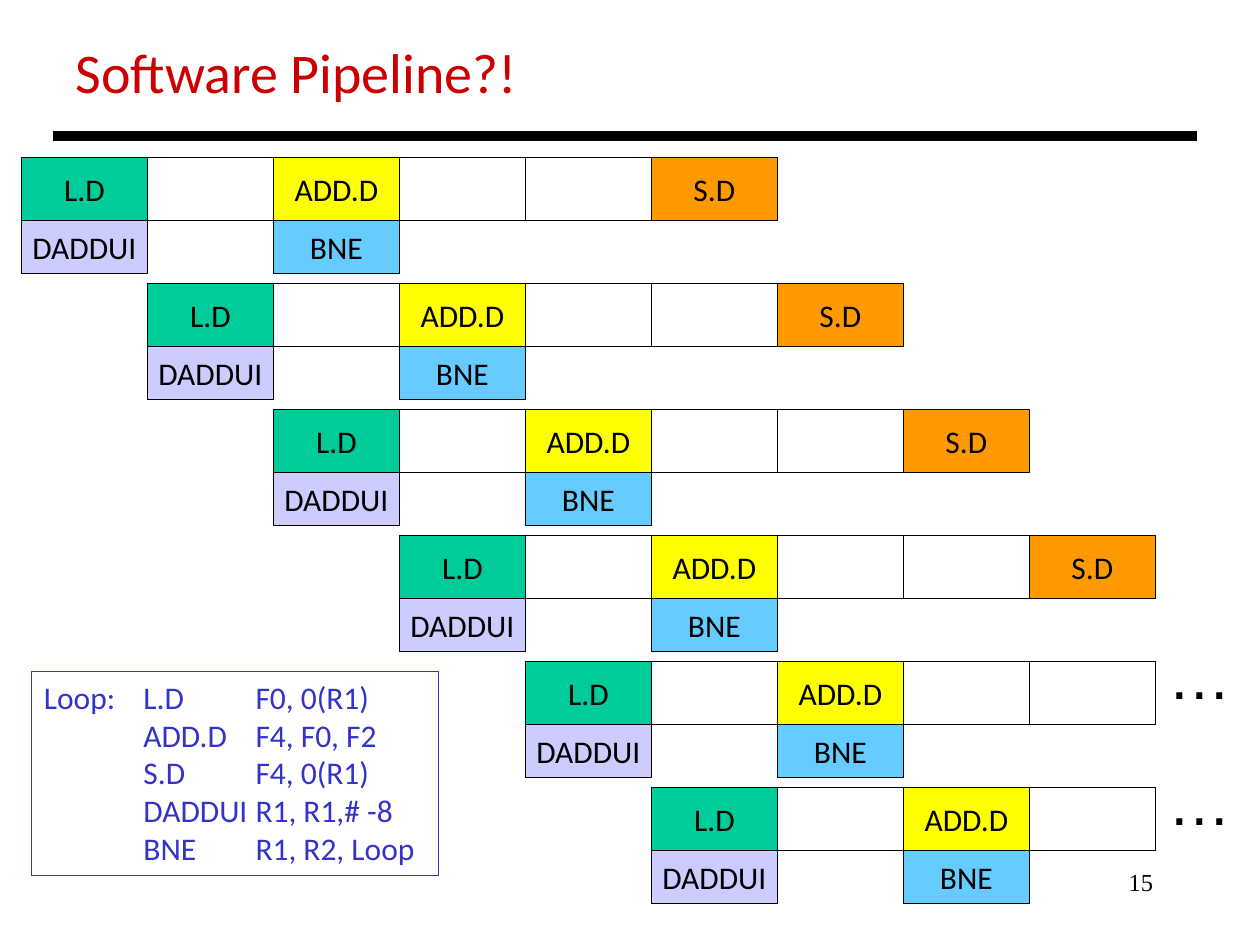
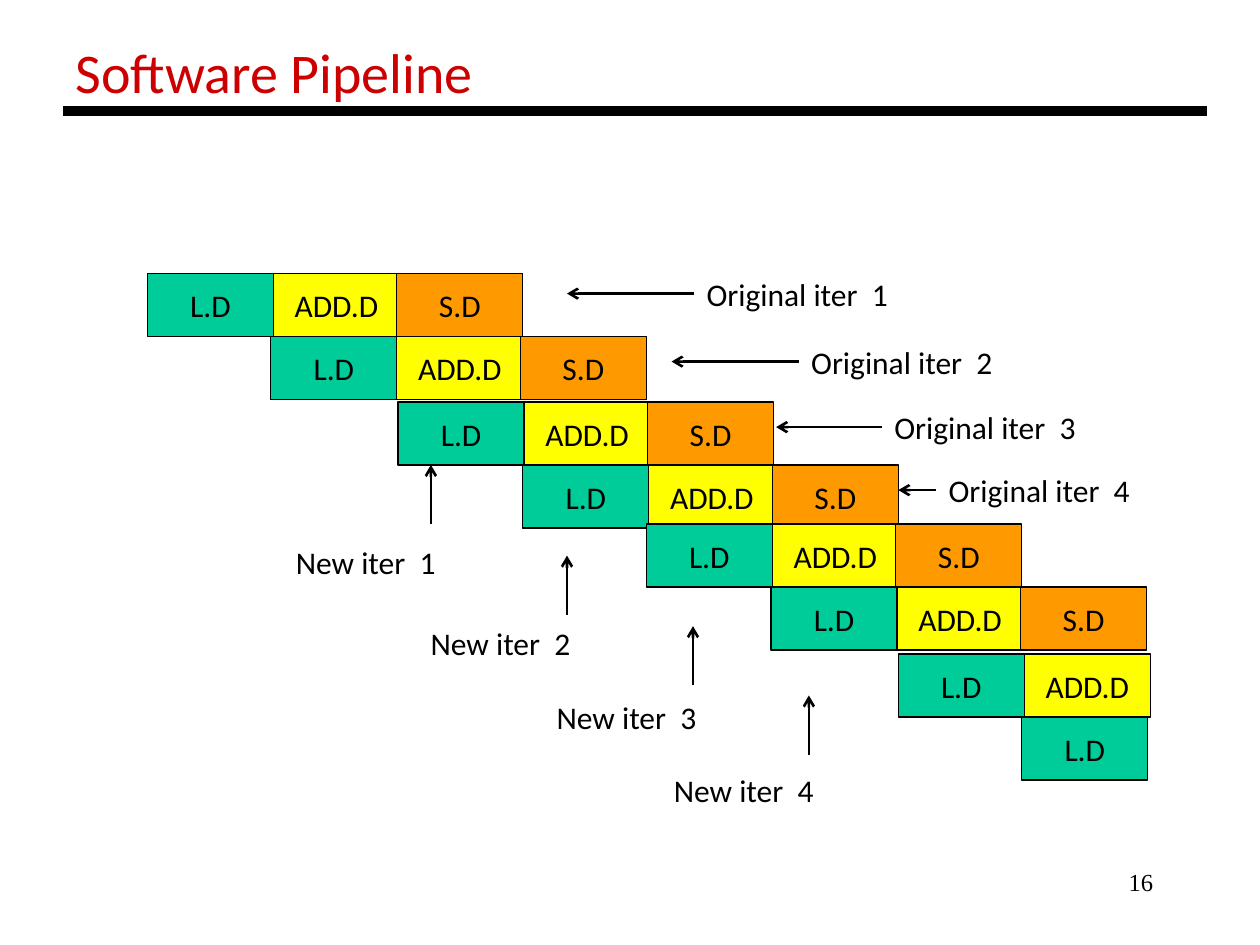
"""Build two slides about software pipelining."""
from dataclasses import dataclass

from pptx import Presentation
from pptx import util as u
from pptx.dml.color import RGBColor
from pptx.enum import shapes, text
from pptx.oxml.ns import qn
from lxml import etree

BLACK, RED, BLUE = "000000", "CC0000", "3333CC"
LEFT, CENTER, RIGHT = text.PP_ALIGN.LEFT, text.PP_ALIGN.CENTER, text.PP_ALIGN.RIGHT
CODE_TABS = (0.79, 1.68)
CODE = """Loop:\tL.D\tF0, 0(R1)
\tADD.D\tF4, F0, F2
\tS.D\tF4, 0(R1)
\tDADDUI\tR1, R1,# -8
\tBNE\tR1, R2, Loop"""


@dataclass(frozen=True)
class Box:
    """Place and size in inches."""
    left: float
    top: float
    width: float
    height: float


@dataclass(frozen=True)
class Style:
    """Look of a paragraph."""
    size: float = 18
    color: str = BLACK
    font: str = "Calibri"
    align: text.PP_ALIGN = LEFT


@dataclass(frozen=True)
class Instruction:
    """Instruction cell; an empty name marks a stall."""
    name: str = ""
    fill: str = ""


@dataclass(frozen=True)
class Iteration:
    """Staircase step with its number of visible instructions."""
    left: float
    top: float
    count: int = 3


@dataclass(frozen=True)
class OriginalLabel:
    """Label whose arrow points left to a step."""
    left: float
    top: float
    arrow_end: float


@dataclass(frozen=True)
class NewLabel:
    """Label whose arrow points up to a column."""
    left: float
    top: float
    arrow_x: float
    arrow_end: float


LOAD = Instruction("L.D", "00CC99")
ADD = Instruction("ADD.D", "FFFF00")
STORE = Instruction("S.D", "FF9900")
STALL = Instruction()
DECREMENT = Instruction("DADDUI", "CCCCFF")
BRANCH = Instruction("BNE", "66CCFF")

SCHEDULE = (LOAD, STALL, ADD, STALL, STALL, STORE)
LOOP_CONTROL = ((0, DECREMENT), (2, BRANCH))
COLUMN_COUNT = 9
STAIRCASE = tuple(zip((LOAD, ADD, STORE), (0, 1, 1.98)))
ITERATIONS = (
    Iteration(1.17, 2.17), Iteration(2.15, 2.67),
    Iteration(3.16, 3.19), Iteration(4.15, 3.69),
    Iteration(5.13, 4.16), Iteration(6.12, 4.66),
    Iteration(7.13, 5.19, 2), Iteration(8.11, 5.69, 1),
)
ORIGINAL_LABELS = (
    OriginalLabel(5.51, 2.13, 4.5), OriginalLabel(6.34, 2.67, 5.33),
    OriginalLabel(7, 3.19, 6.16), OriginalLabel(7.43, 3.69, 7.13),
)
NEW_LABELS = (
    NewLabel(2.25, 4.26, 3.42, 3.69), NewLabel(3.32, 4.9, 4.5, 4.41),
    NewLabel(4.32, 5.49, 5.5, 4.97), NewLabel(5.25, 6.07, 6.42, 5.52),
)


def rgb(color: str) -> RGBColor:
    """Turn a hex string into a colour."""
    return RGBColor.from_string(color)


def inches(box: Box) -> tuple:
    """Give the four lengths of a box."""
    return tuple(u.Inches(value) for value in (box.left, box.top, box.width, box.height))


def write(shape, content: str, style: Style, wrap: bool = False) -> None:
    """Put styled text into a shape."""
    frame = shape.text_frame
    frame.word_wrap = wrap
    frame.text = content
    for paragraph in frame.paragraphs:
        paragraph.alignment = style.align
        paragraph.font.size = u.Pt(style.size)
        paragraph.font.name = style.font
        paragraph.font.color.rgb = rgb(style.color)


def add_text(slide, box: Box, content: str, style: Style = Style(), wrap: bool = False):
    """Add a text box."""
    shape = slide.shapes.add_textbox(*inches(box))
    write(shape, content, style, wrap)
    return shape


def add_rectangle(slide, box: Box, line: str, fill: str = ""):
    """Add an outlined rectangle, filled when a colour is given."""
    shape = slide.shapes.add_shape(shapes.MSO_SHAPE.RECTANGLE, *inches(box))
    shape.shadow.inherit = False
    shape.line.color.rgb = rgb(line)
    shape.line.width = u.Pt(0.75)
    if fill:
        shape.fill.solid()
        shape.fill.fore_color.rgb = rgb(fill)
    else:
        shape.fill.background()
    return shape


def add_cell(slide, instruction: Instruction, left: float, top: float, height: float = 0.5) -> None:
    """Add one instruction cell."""
    shape = add_rectangle(slide, Box(left, top, 1, height), BLACK, instruction.fill)
    if instruction.name:
        write(shape, instruction.name, Style(align=CENTER))
        shape.text_frame.vertical_anchor = text.MSO_ANCHOR.MIDDLE


def add_line(slide, start: tuple[float, float], end: tuple[float, float],
             width: float, arrow: bool = False):
    """Add a straight black line or arrow."""
    points = (u.Inches(value) for value in (*start, *end))
    connector = slide.shapes.add_connector(shapes.MSO_CONNECTOR.STRAIGHT, *points)
    connector.line.color.rgb = rgb(BLACK)
    connector.line.width = u.Pt(width)
    if arrow:
        etree.SubElement(connector.line._get_or_add_ln(), qn("a:tailEnd"), type="arrow")
    etree.SubElement(connector._element.spPr, qn("a:effectLst"))
    return connector


def add_slide(presentation, title: str, title_width: float, number: int,
              rule_left: float, rule_top: float):
    """Add a blank slide with title, rule and number."""
    slide = presentation.slides.add_slide(presentation.slide_layouts[6])
    add_text(slide, Box(7.17, 6.83, 2.08, 0.5), str(number),
             Style(14, font="Times New Roman", align=RIGHT), wrap=True)
    add_text(slide, Box(0.5, 0.25, title_width, 0.64), title, Style(32, RED))
    add_line(slide, (rule_left, rule_top), (rule_left + 9.08, rule_top), 6)
    return slide


def add_code(slide) -> None:
    """Add the framed loop listing with its tab columns."""
    shape = add_rectangle(slide, Box(0.25, 5.33, 3.23, 1.62), BLUE)
    write(shape, CODE, Style(color=BLUE), wrap=True)
    shape.text_frame.vertical_anchor = text.MSO_ANCHOR.TOP
    for paragraph in shape.text_frame.paragraphs:
        tabs = etree.Element(qn("a:tabLst"))
        for position in CODE_TABS:
            etree.SubElement(tabs, qn("a:tab"), pos=str(u.Inches(position)), algn="l")
        paragraph._p.get_or_add_pPr().insert(0, tabs)


def build_schedule(presentation) -> None:
    """Draw six overlapped iterations with their stalls."""
    slide = add_slide(presentation, "Software Pipeline?!", 3.75, 15, 0.42, 1.08)
    for step in range(6):
        left, top = 0.17 + step, 1.25 + step
        for column, instruction in enumerate(SCHEDULE[:COLUMN_COUNT - step]):
            add_cell(slide, instruction, left + column, top)
        for column, instruction in LOOP_CONTROL:
            add_cell(slide, instruction, left + column, top + 0.5, 0.42)
    for top in (5, 6):
        add_text(slide, Box(9.17, top, 0.7, 0.7), "…", Style(36, font="Arial"))
    add_code(slide)


def build_pipeline(presentation) -> None:
    """Draw the staircase and label original and new iterations."""
    slide = add_slide(presentation, "Software Pipeline", 3.4, 16, 0.5, 0.88)
    for iteration in ITERATIONS:
        for instruction, offset in STAIRCASE[:iteration.count]:
            add_cell(slide, instruction, iteration.left + offset, iteration.top)
    for number, label in enumerate(ORIGINAL_LABELS, 1):
        shape = add_text(slide, Box(label.left, label.top, 1.66, 0.4), f"Original iter  {number}")
        middle = label.top + 0.2
        arrow = add_line(slide, (label.left, middle), (label.arrow_end, middle), 1.5, arrow=True)
        arrow.begin_connect(shape, 1)
    for number, label in enumerate(NEW_LABELS, 1):
        add_text(slide, Box(label.left, label.top, 1.33, 0.4), f"New iter  {number}")
        add_line(slide, (label.arrow_x, label.arrow_end + 0.47),
                 (label.arrow_x, label.arrow_end), 1.5, arrow=True)


def main() -> None:
    """Build and save the presentation."""
    presentation = Presentation()
    presentation.slide_width = u.Inches(10)
    presentation.slide_height = u.Inches(7.5)
    build_schedule(presentation)
    build_pipeline(presentation)
    presentation.save("out.pptx")


if __name__ == "__main__":
    main()
